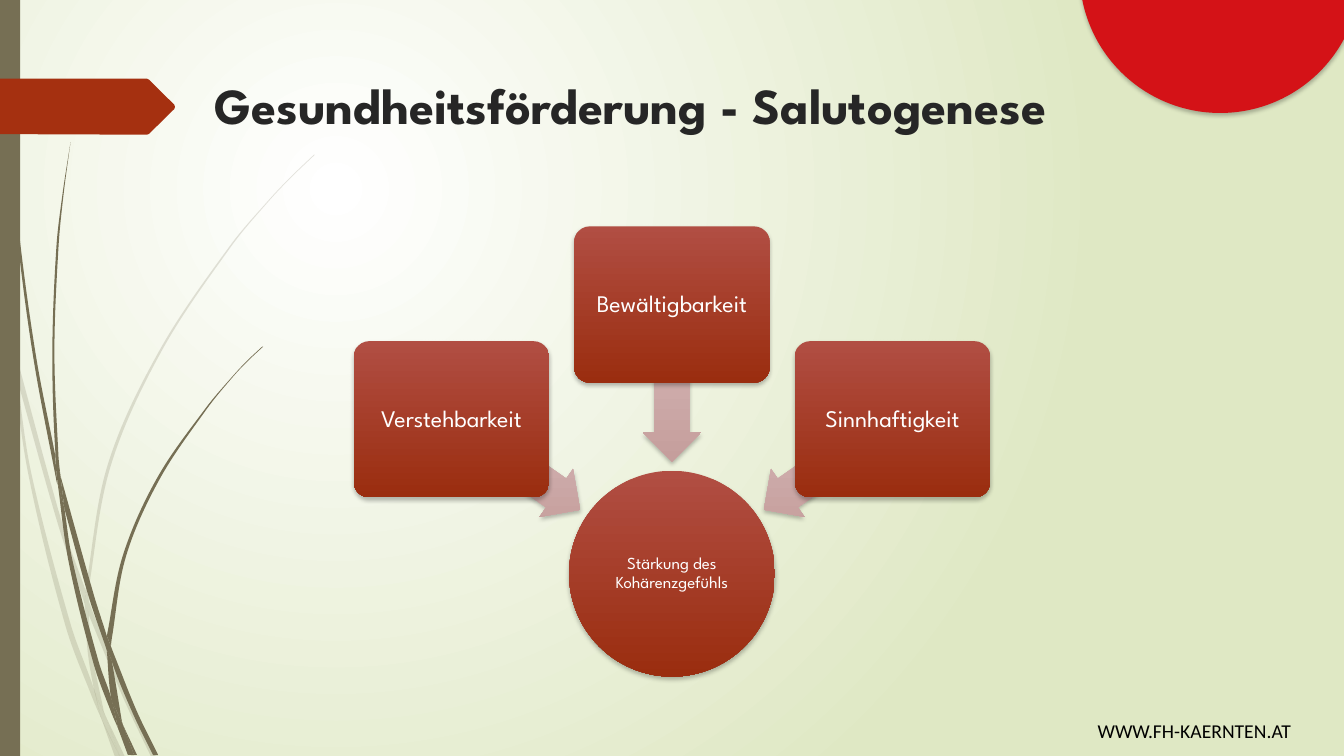
from dataclasses import dataclass
from math import dist

from lxml.etree import SubElement
from pptx import Presentation
from pptx.dml.color import RGBColor
from pptx.enum.shapes import MSO_SHAPE as Shape
from pptx.enum.text import MSO_ANCHOR as Anchor, PP_ALIGN as Align
from pptx.oxml.ns import qn
from pptx.util import Pt

Point = tuple[float, float]
SLIDE_W, SLIDE_H = 960, 540
CENTRE = SLIDE_W / 2
OLIVE, RUST, RED, WHITE = "766F54", "A53010", "D41217", "FFFFFF"
BRICK = ("B14E43", "9A2D0F")
ROSE = ("D7BBBA", "C59E9C")
HEADING_FONT = "League Spartan"


@dataclass
class Blade:
    """A piece of grass between two curved edges, one there and one back."""
    there: list[Point]
    back: list[Point]


@dataclass
class Pillar:
    """A box with its arrow; side is -1, 0 or 1 from the centre."""
    name: str
    side: int
    box_top: float
    arrow_top: float


FAINT_GRASS = [
    Blade([(7.9, 252), (6.5, 231.8), (0, 203)], [(0, 215.3), (7.2, 247.7)]),
    Blade([(12.2, 270.7), (41.8, 375.8), (60.5, 431.3)], [(61.2, 421.9), (44.6, 374.4), (10.1, 248.4)]),
    Blade([(63.4, 439.2), (88.6, 499.7), (108, 540.7)],
          [(111.6, 540.7), (91.4, 498.2), (66.2, 437), (63.4, 429.1)]),
    Blade([(75.6, 511.9), (85.7, 540.7)], [(89.3, 540.7)]),
    Blade([(7.9, 252), (20.2, 338.4), (46.8, 447.1), (66.2, 499), (72.7, 514.1)],
          [(71.3, 509), (67, 491.8), (50.4, 445.7), (22.3, 337.7), (12.2, 270.7)]),
    Blade([(60.5, 431.3), (62.6, 465.1), (67, 491.8), (69.1, 498.2), (75.6, 511.9)],
          [(74.2, 508.3), (65.5, 465.1), (63.4, 439.2), (63.4, 437.8)]),
    Blade([(63.4, 429.1), (63.4, 420.5), (79.2, 332.6), (115.2, 251.3), (164.9, 176.4),
           (193, 142.6), (208.8, 126), (224.6, 110.9)],
          [(224.6, 110.2), (208.1, 126), (193, 141.8), (164.2, 175.7), (113.8, 250.6),
           (77, 331.9), (61.2, 420.5), (61.2, 421.9)]),
    Blade([(72.7, 514.1), (82.1, 540.7)], [(85.7, 540.7)]),
    Blade([(60.5, 431.3), (63.4, 437.8), (63.4, 439.2)], [(63.4, 429.1), (61.2, 421.9)]),
    Blade([(67, 491.8), (71.3, 509), (72.7, 514.1), (85.7, 540.7)], [(75.6, 511.9), (69.1, 498.2)]),
]
DARK_GRASS = [
    Blade([(2.2, 0), (2.9, 34.6), (5, 79.2), (12.2, 167.8), (23.8, 255.6), (40.3, 343.4), (41, 346.3)],
          [(39.6, 329), (39.6, 326.2), (25.9, 255.6), (13.7, 167), (5.8, 78.5), (3.6, 34.6), (2.9, 0)]),
    Blade([(46.1, 363.6), (63.4, 426.2), (76.3, 464.4)],
          [(76.3, 455.8), (76.3, 454.3), (67, 424.8), (43.2, 339.8)]),
    Blade([(79.2, 461.5), (79.9, 472.3), (95, 509.8), (109.4, 539.3)],
          [(113, 539.3), (97.9, 508.3), (81.4, 467.3)]),
    Blade([(41, 343.4), (49, 401), (67, 474.5), (79.9, 509.8), (84.2, 519.8)],
          [(83.5, 516.2), (79.2, 497.5), (70.6, 473), (51.8, 400.3), (46.1, 363.6)]),
    Blade([(43.2, 339.8), (41.8, 326.2), (38.9, 251.3), (41.8, 176.4), (45.4, 139), (50.4, 101.5)],
          [(50.4, 101.5), (44.6, 139), (40.3, 176.4), (37.4, 251.3), (39.6, 323.3), (43.2, 339.8)]),
    Blade([(87.8, 517.7), (95.8, 539.3)], [(97.9, 539.3)]),
    Blade([(39.6, 323.3), (39.6, 326.2), (41, 343.4), (46.1, 363.6)], [(43.2, 339.8)]),
    Blade([(79.2, 461.5), (79.9, 455.8), (90, 397.4), (113.8, 342.7), (147.6, 292.3),
           (166.3, 269.3), (176.4, 258.5), (187.9, 247.7)],
          [(187.2, 247.7), (176.4, 257.8), (166.3, 268.6), (146.9, 291.6), (112.3, 341.3),
           (87.8, 396.7), (76.3, 454.3)]),
    Blade([(84.2, 519.8), (91.4, 539.3)], [(94.3, 539.3)]),
    Blade([(76.3, 464.4), (79.2, 497.5), (83.5, 508.3), (87.8, 517.7)],
          [(87.1, 515.5), (79.9, 472.3), (78.5, 468.7)]),
    Blade([(76.3, 454.3), (76.3, 464.4), (78.5, 468.7), (79.9, 472.3)], [(79.2, 461.5)]),
    Blade([(79.2, 497.5), (83.5, 516.2), (84.2, 519.8), (93.6, 539.3)],
          [(95.8, 539.3), (87.8, 517.7), (83.5, 508.3)]),
]
TITLE_TAG = [(0, 56.2), (105, 56.2), (106.5, 56.9), (124.6, 74.9), (125, 76.3),
             (124.6, 77.8), (106.5, 95.6), (105, 96.2), (0, 95.8)]
PILLARS = [
    Pillar("Verstehbarkeit", -1, 243.7, 311),
    Pillar("Bewältigbarkeit", 0, 161.7, 252.7),
    Pillar("Sinnhaftigkeit", 1, 243.7, 311),
]


def rgb(code: str) -> RGBColor:
    return RGBColor.from_string(code)


def fill_gradient(fill, colours: tuple[str, str]) -> None:
    fill.gradient()
    for stop, colour, position in zip(fill.gradient_stops, colours, (0, 1)):
        stop.color.rgb = rgb(colour)
        stop.position = position


def add_shadow(shape) -> None:
    effects = shape._element.spPr.find(qn("a:effectLst"))
    shadow = SubElement(effects, qn("a:outerShdw"), blurRad=str(Pt(3)), dist=str(Pt(2)),
                        dir="5400000", algn="ctr", rotWithShape="0")
    colour = SubElement(shadow, qn("a:srgbClr"), val="000000")
    SubElement(colour, qn("a:alpha"), val="25000")


def paint(shape, colours: tuple[str, ...]) -> None:
    """Fill with one flat colour or a top-to-bottom gradient, without a border."""
    shape.shadow.inherit = False
    shape.line.fill.background()
    if len(colours) == 1:
        shape.fill.solid()
        shape.fill.fore_color.rgb = rgb(colours[0])
    else:
        fill_gradient(shape.fill, colours)
        shape.fill.gradient_angle = 270
        shape._element.spPr.find(qn("a:gradFill")).set("rotWithShape", "0")


def add_figure(slide, kind, left: float, top: float, width: float, height: float,
               colours: tuple[str, ...], shaded: bool = True):
    figure = slide.shapes.add_shape(kind, Pt(left), Pt(top), Pt(width), Pt(height))
    paint(figure, colours)
    if shaded:
        add_shadow(figure)
    return figure


def add_outline(slide, points: list[Point], colour: str):
    corners = [(Pt(x), Pt(y)) for x, y in points]
    builder = slide.shapes.build_freeform(*corners[0])
    builder.add_line_segments(corners[1:], close=True)
    outline = builder.convert_to_shape()
    paint(outline, (colour,))
    return outline


def bend(outline, first: int, count: int) -> None:
    """Turn the lines through one edge's points into a smooth curve."""
    route = outline._element.find(".//" + qn("a:path"))
    steps = list(route)[first:first + count]
    ends = [(int(step[0].get("x")), int(step[0].get("y"))) for step in steps]
    padded = [ends[0], *ends, ends[-1]]
    for step, a, b, c, d in zip(steps[1:], padded, padded[1:], padded[2:], padded[3:]):
        reach = dist(b, c) / 3
        end = step[0]
        step.tag = qn("a:cubicBezTo")
        for anchor, start, stop, sign in ((b, a, c, 1), (c, b, d, -1)):
            pull = sign * reach / dist(start, stop)
            x, y = (round(p + pull * (r - q)) for p, q, r in zip(anchor, start, stop))
            SubElement(step, qn("a:pt"), x=str(x), y=str(y))
        step.append(end)


def add_blade(slide, blade: Blade, opacity: int) -> None:
    grass = add_outline(slide, blade.there + blade.back, OLIVE)
    bend(grass, 0, len(blade.there))
    bend(grass, len(blade.there), len(blade.back))
    if opacity < 100:
        tint = grass._element.spPr.find(qn("a:solidFill"))[0]
        SubElement(tint, qn("a:alpha"), val=str(opacity * 1000))


def add_text(slide, left: float, top: float, width: float, height: float, words: str,
             size: float, colour: str, font: str = HEADING_FONT, bold: bool = False):
    frame = slide.shapes.add_textbox(Pt(left), Pt(top), Pt(width), Pt(height)).text_frame
    frame.word_wrap = True
    frame.text = words
    letters = frame.paragraphs[0].runs[0].font
    letters.name, letters.size, letters.bold = font, Pt(size), bold
    letters.color.rgb = rgb(colour)
    return frame


def add_label(slide, middle: float, top: float, width: float, height: float,
              words: str, size: float, inset: float) -> None:
    frame = add_text(slide, middle - width / 2, top, width, height, words, size, WHITE)
    frame.vertical_anchor = Anchor.MIDDLE
    frame.margin_left = frame.margin_right = frame.margin_top = frame.margin_bottom = Pt(inset)
    frame.paragraphs[0].alignment = Align.CENTER
    frame.paragraphs[0].line_spacing = 0.9


def add_pillar(slide, pillar: Pillar) -> None:
    arrow_w, arrow_h, box_w, box_h, rim = 112.3, 41.8, 139.7, 111.6, 3.2
    arrow = add_figure(slide, Shape.LEFT_ARROW, CENTRE + pillar.side * 111.6 - arrow_w / 2,
                       pillar.arrow_top, arrow_w, arrow_h, ROSE)
    arrow.adjustments[0], arrow.adjustments[1] = 0.6, 0.5
    arrow.rotation = 270 + 55 * pillar.side
    middle = CENTRE + pillar.side * 157.5
    box = add_figure(slide, Shape.ROUNDED_RECTANGLE, middle - box_w / 2, pillar.box_top,
                     box_w, box_h, BRICK)
    box.adjustments[0] = 0.1
    add_label(slide, middle, pillar.box_top + rim, box_w - 2 * rim, box_h - 2 * rim, pillar.name, 17, 3)


def main() -> None:
    deck = Presentation()
    deck.slide_width, deck.slide_height = Pt(SLIDE_W), Pt(SLIDE_H)
    slide = deck.slides.add_slide(deck.slide_layouts[6])
    # Background with a glow in the upper left
    fill_gradient(slide.background.fill, (WHITE, "DFE8C4"))
    glow = slide._element.find(".//" + qn("a:gradFill"))
    glow.remove(glow.find(qn("a:lin")))
    circle = SubElement(glow, qn("a:path"), path="circle")
    SubElement(circle, qn("a:fillToRect"), l="50000", t="50000", r="100000", b="100000")
    # Grass, side bar, title tag and corner disc
    for grass, opacity in ((FAINT_GRASS, 20), (DARK_GRASS, 100)):
        for blade in grass:
            add_blade(slide, blade, opacity)
    add_figure(slide, Shape.RECTANGLE, 0, 0, 14.4, SLIDE_H, (OLIVE,), shaded=False)
    add_outline(slide, TITLE_TAG, RUST)
    add_figure(slide, Shape.OVAL, 771.1, -120.2, 200.9, 200.9, (RED,))
    # Web address and title
    add_text(slide, 776.9, 509.8, 202.3, 38.2, "WWW.FH-KAERNTEN.AT", 14, "000000", "Calibri")
    add_text(slide, 146.2, 49.4, 759.6, 100.8, "Gesundheitsförderung - Salutogenese", 36, "262626", bold=True)
    # Three pillars pointing at the goal
    goal_size, label_size = 147, 103.7
    add_figure(slide, Shape.OVAL, CENTRE - goal_size / 2, 336.3, goal_size, goal_size, BRICK)
    add_label(slide, CENTRE, 357.9, label_size, label_size, "Stärkung des Kohärenzgefühls", 12, 1)
    for pillar in PILLARS:
        add_pillar(slide, pillar)
    deck.save("out.pptx")


if __name__ == "__main__":
    main()
